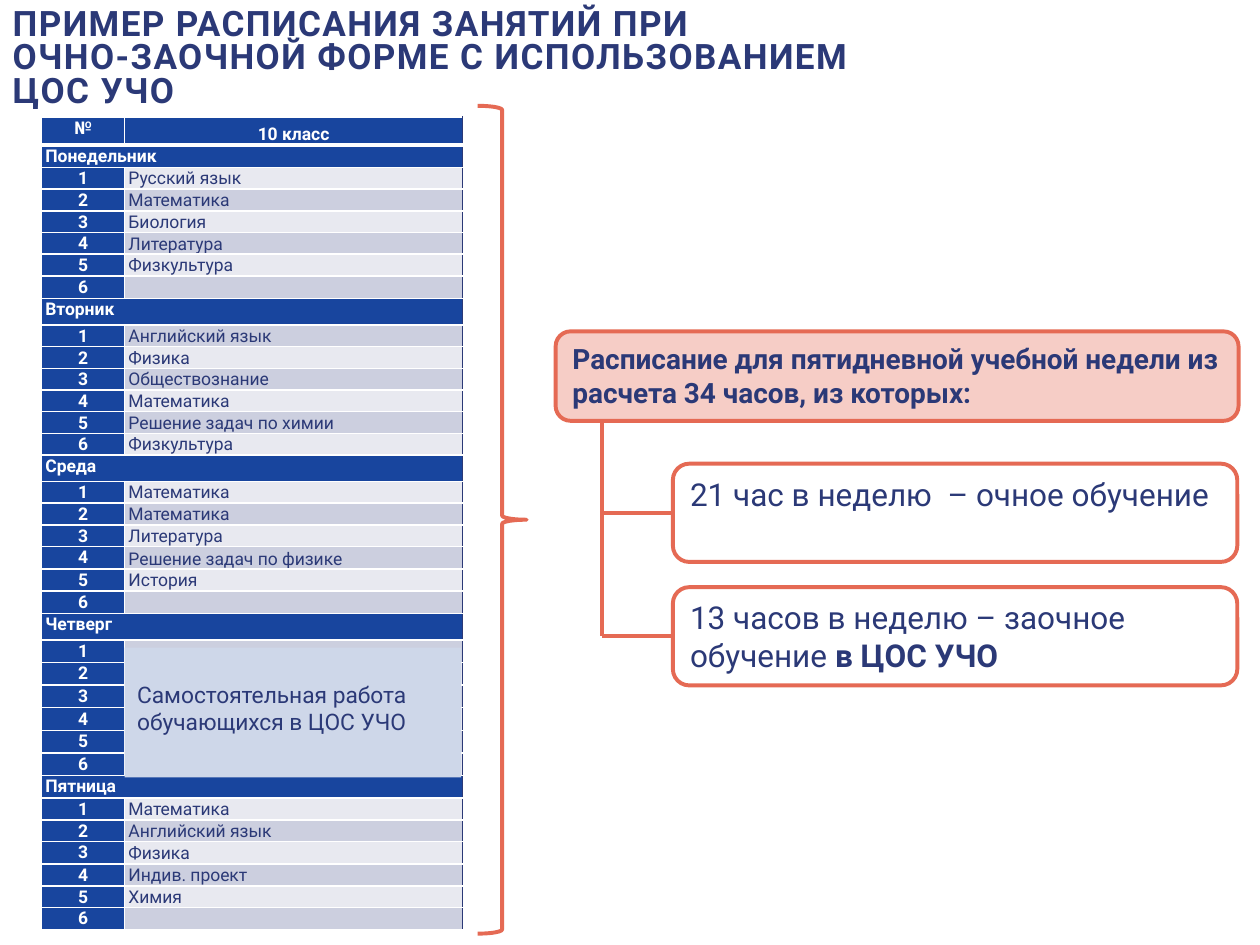
import pptx
import pptx.dml.color
import pptx.enum.shapes
import pptx.enum.text
import pptx.oxml.ns
import pptx.util
from lxml import etree

Inches = pptx.util.Inches
Pt = pptx.util.Pt
qn = pptx.oxml.ns.qn
Shape = pptx.enum.shapes.MSO_SHAPE
Align = pptx.enum.text.PP_ALIGN
Anchor = pptx.enum.text.MSO_ANCHOR

NAVY, BLUE, WHITE, CORAL = "2B3977", "18459E", "FFFFFF", "E56A54"
PINK, PALE_BLUE = "F6CDC6", "CED7E9"
STRIPES = ("E8E9F0", "CCCFDF")

WEEK = {
    "Понедельник": ["Русский язык", "Математика", "Биология", "Литература",
                    "Физкультура", ""],
    "Вторник": ["Английский язык", "Физика", "Обществознание", "Математика",
                "Решение задач по химии", "Физкультура"],
    "Среда": ["Математика", "Математика", "Литература",
              "Решение задач по физике", "История", ""],
    "Четверг": [""] * 6,
    "Пятница": ["Математика", "Английский язык", "Физика", "Индив. проект",
                "Химия", ""],
}
DAY_HEIGHTS = {"Понедельник": 0.18, "Пятница": 0.18}
TALL_ROWS = {7, 19, 21, 25, 28, 32}


def color(value):
    return pptx.dml.color.RGBColor.from_string(value)


class SlideBuilder:
    font_name = "Roboto"
    line_width = Pt(2.25)

    def __init__(self, slide):
        self.slide = slide

    def run(self, paragraph, text, size, tint=NAVY, bold=False):
        run = paragraph.add_run()
        run.text = text
        run.font.name = self.font_name
        run.font.size = Pt(size)
        run.font.bold = bold
        run.font.color.rgb = color(tint)
        return run

    def title(self, lines, left, top, width, height):
        title = self.slide.shapes.title
        title.left, title.top = Inches(left), Inches(top)
        title.width, title.height = Inches(width), Inches(height)
        frame = title.text_frame
        frame.auto_size = pptx.enum.text.MSO_AUTO_SIZE.NONE
        frame.vertical_anchor = Anchor.MIDDLE
        paragraph = frame.paragraphs[0]
        paragraph.alignment = Align.LEFT
        paragraph.line_spacing = 0.8
        for index, line in enumerate(lines):
            if index:
                paragraph.add_line_break()
            run = self.run(paragraph, line, 20, bold=True)
            run.font._element.set("spc", "80")

    def shape(self, kind, left, top, width, height, fill=None, line=None):
        shape = self.slide.shapes.add_shape(
            kind, Inches(left), Inches(top), Inches(width), Inches(height))
        shape.shadow.inherit = False
        if fill:
            shape.fill.solid()
            shape.fill.fore_color.rgb = color(fill)
        else:
            shape.fill.background()
        if line:
            shape.line.color.rgb = color(line)
            shape.line.width = self.line_width
        else:
            shape.line.fill.background()
        return shape

    def text_shape(self, kind, box, runs, size, fill=None, line=None, margin_top=0.05):
        """Runs are pairs of text and boldness."""
        shape = self.shape(kind, *box, fill, line)
        frame = shape.text_frame
        frame.word_wrap = True
        frame.vertical_anchor = Anchor.TOP
        frame.margin_top = Inches(margin_top)
        paragraph = frame.paragraphs[0]
        paragraph.alignment = Align.LEFT
        for text, bold in runs:
            self.run(paragraph, text, size, bold=bold)
        return shape

    def connector(self, start, end, start_box=None):
        """Draw a line; start_box is joined at the middle of its left side."""
        points = [Inches(value) for value in (*start, *end)]
        line = self.slide.shapes.add_connector(
            pptx.enum.shapes.MSO_CONNECTOR.STRAIGHT, *points)
        line.line.color.rgb = color(CORAL)
        line.line.width = self.line_width
        etree.SubElement(line._element.spPr, qn("a:effectLst"))
        if start_box is not None:
            line.begin_connect(start_box, 1)

    def border(self, cell, side, tint, width):
        edge = etree.SubElement(cell._tc.get_or_add_tcPr(), qn(f"a:ln{side}"),
                                w=str(Pt(width)))
        fill = etree.SubElement(edge, qn("a:solidFill"))
        etree.SubElement(fill, qn("a:srgbClr"), val=tint)

    def cell(self, cell, text, fill, tint=WHITE, bold=True, align=Align.LEFT,
             anchor=Anchor.TOP, right=WHITE, bottom_width=1):
        cell.margin_left = cell.margin_right = Inches(0.03)
        cell.margin_top, cell.margin_bottom = Inches(0.01), 0
        cell.vertical_anchor = anchor
        for side, edge, width in (("L", WHITE, 1), ("R", right, 1),
                                  ("T", WHITE, 1), ("B", WHITE, bottom_width)):
            self.border(cell, side, edge, width)
        cell.fill.solid()
        cell.fill.fore_color.rgb = color(fill)
        paragraph = cell.text_frame.paragraphs[0]
        paragraph.alignment = align
        if text:
            self.run(paragraph, text, 10, tint, bold)
        else:
            etree.SubElement(paragraph._p, qn("a:endParaRPr"), sz="1000")

    def timetable(self, left, top, columns):
        row_count = 1 + sum(1 + len(lessons) for lessons in WEEK.values())
        table = self.slide.shapes.add_table(
            row_count, len(columns), Inches(left), Inches(top),
            Inches(sum(columns)), Inches(6.37)).table
        table.first_row = table.horz_banding = False
        for column, width in zip(table.columns, columns):
            column.width = Inches(width)

        table.rows[0].height = Inches(0.22)
        self.cell(table.cell(0, 0), "№", BLUE, align=Align.CENTER, bottom_width=3)
        self.cell(table.cell(0, 1), "10 класс", BLUE, align=Align.CENTER,
                  anchor=Anchor.BOTTOM, right=NAVY, bottom_width=3)
        row = 1
        for day, lessons in WEEK.items():
            table.rows[row].height = Inches(DAY_HEIGHTS.get(day, 0.21))
            table.cell(row, 0).merge(table.cell(row, 1))
            for column, text in enumerate((day, "")):
                self.cell(table.cell(row, column), text, BLUE, right=NAVY)
            row += 1
            for number, subject in enumerate(lessons, 1):
                table.rows[row].height = Inches(0.18 if row in TALL_ROWS else 0.17)
                self.cell(table.cell(row, 0), str(number), BLUE, align=Align.CENTER)
                self.cell(table.cell(row, 1), subject, STRIPES[row % 2], NAVY,
                          bold=False, anchor=Anchor.BOTTOM, right=NAVY)
                row += 1


def main():
    presentation = pptx.Presentation()
    presentation.slide_width, presentation.slide_height = Inches(10), Inches(7.5)
    builder = SlideBuilder(
        presentation.slides.add_slide(presentation.slide_layouts[5]))

    builder.title(["ПРИМЕР РАСПИСАНИЯ ЗАНЯТИЙ ПРИ",
                   "ОЧНО-ЗАОЧНОЙ ФОРМЕ С ИСПОЛЬЗОВАНИЕМ",
                   "ЦОС УЧО"], 0, 0.08, 7.94, 0.79)
    builder.timetable(0.33, 0.93, (0.66, 2.68))
    builder.text_shape(Shape.RECTANGLE, (0.99, 5.14, 2.67, 1.03),
                       [("Самостоятельная работа обучающихся в ЦОС УЧО", False)],
                       13, fill=PALE_BLUE, margin_top=0.26)
    builder.shape(Shape.RIGHT_BRACE, 3.79, 0.84, 0.39, 6.57, line=CORAL)

    spine, branch_left, branch_height = 4.78, 5.34, 0.78
    branches = [
        (3.68, [("21 час в неделю\u00a0 – очное обучение".replace("\u00a0", " "), False)]),
        (4.66, [("13 часов в неделю – заочное обучение ", False),
                ("в ЦОС УЧО", True)]),
    ]
    builder.text_shape(
        Shape.ROUNDED_RECTANGLE, (4.41, 2.63, 5.42, 0.71),
        [("Расписание для пятидневной учебной недели из расчета 34 часов, "
          "из которых:", True)], 16, fill=PINK, line=CORAL)
    for top, runs in branches:
        form = builder.text_shape(
            Shape.ROUNDED_RECTANGLE, (branch_left, top, 4.48, branch_height),
            runs, 18, line=CORAL)
        middle = top + branch_height / 2
        builder.connector((branch_left, middle), (spine, middle), form)
    builder.connector((spine, 3.34), (spine, middle))

    presentation.save("out.pptx")


if __name__ == "__main__":
    main()
